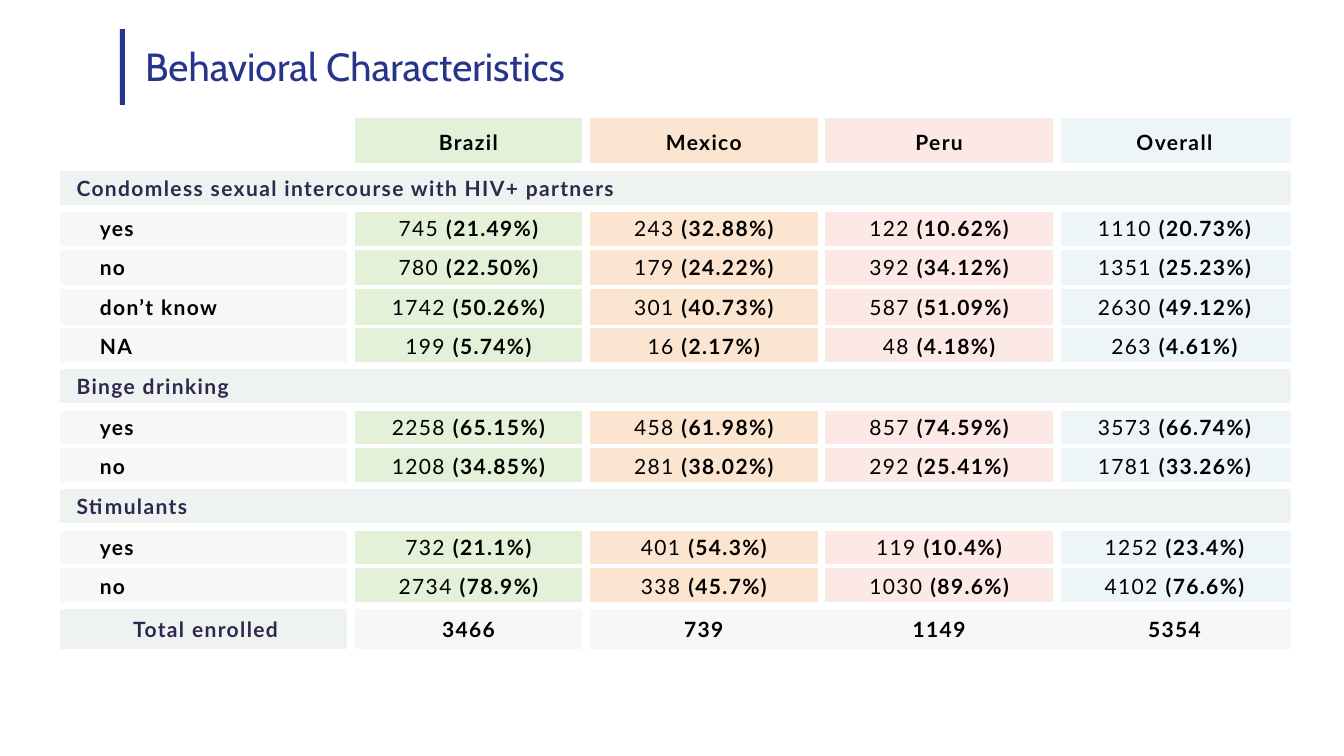
from dataclasses import dataclass

from lxml.etree import SubElement
from pptx import Presentation
from pptx.dml.color import RGBColor as RGB
from pptx.enum.shapes import MSO_SHAPE as Shape
from pptx.enum.text import MSO_ANCHOR as Anchor, PP_ALIGN as Align
from pptx.oxml.ns import qn
from pptx.util import Pt


@dataclass(frozen=True)
class Theme:
    title_font: str = "Cabin"
    table_font: str = "Lato"
    title_size: int = 28
    table_size: int = 15
    navy: str = "27348B"
    ink: str = "000000"
    heading: str = "2F284E"
    border: str = "FFFFFF"
    band: str = "EEF2F1"
    pale: str = "F6F8F7"
    groups: tuple = ("E2F1D7", "FCE5D0", "FCE8E4", "EEF5F8")


T = Theme()
WIDE, THIN, EDGE = 6, 3, 2.25
NO_STYLE = "{2D5ABB26-0587-4C30-8999-92F81FD0307C}"
LABEL_WIDTH, GROUP_WIDTH = 207.4, 168.1
ROW_HEIGHTS = {"header": 31.7, "section": 29.5, "answer": 28.1, "total": 33.8}
INDENTS = {"header": 7.2, "section": 11.5, "answer": 28.1, "total": 0}

ROWS = [
    ("header", "", "Brazil", "Mexico", "Peru", "Overall"),
    ("section", "Condomless sexual intercourse with HIV+ partners"),
    ("answer", "yes", "745 (21.49%)", "243 (32.88%)", "122 (10.62%)", "1110 (20.73%)"),
    ("answer", "no", "780 (22.50%)", "179 (24.22%)", "392 (34.12%)", "1351 (25.23%)"),
    ("answer", "don’t know", "1742 (50.26%)", "301 (40.73%)", "587 (51.09%)", "2630 (49.12%)"),
    ("answer", "NA", "199 (5.74%)", "16 (2.17%)", "48 (4.18%)", "263 (4.61%)"),
    ("section", "Binge drinking"),
    ("answer", "yes", "2258 (65.15%)", "458 (61.98%)", "857 (74.59%)", "3573 (66.74%)"),
    ("answer", "no", "1208 (34.85%)", "281 (38.02%)", "292 (25.41%)", "1781 (33.26%)"),
    ("section", "Stimulants"),
    ("answer", "yes", "732 (21.1%)", "401 (54.3%)", "119 (10.4%)", "1252 (23.4%)"),
    ("answer", "no", "2734 (78.9%)", "338 (45.7%)", "1030 (89.6%)", "4102 (76.6%)"),
    ("total", "Total enrolled", "3466", "739", "1149", "5354"),
]


def set_borders(cell, **widths):
    """Draw the given sides (L, R, T, B, in that order); 0 leaves a side out."""
    tc_pr = cell._tc.get_or_add_tcPr()
    for side, width in widths.items():
        if width:
            line = SubElement(tc_pr, qn(f"a:ln{side}"), w=str(Pt(width)))
            fill = SubElement(line, qn("a:solidFill"))
            SubElement(fill, qn("a:srgbClr"), val=T.border)


def write(cell, text, color, align):
    """Set bold, spaced text; a count before a percentage stays regular."""
    p = cell.text_frame.paragraphs[0]
    p.alignment = align
    count, bracket, share = text.partition("(")
    if bracket:
        p.text = count
        p.add_run().text = bracket + share
    else:
        p.text = text
    for i, r in enumerate(p.runs):
        r.font.name = T.table_font
        r.font.size = Pt(T.table_size)
        r.font.bold = not bracket or i == 1
        r.font.color.rgb = RGB.from_string(color)
        r._r.get_or_add_rPr().set("spc", "100")


prs = Presentation()
prs.slide_width, prs.slide_height = Pt(960), Pt(540)
s = prs.slides.add_slide(prs.slide_layouts[5])

bar = s.shapes.add_shape(Shape.RECTANGLE, Pt(85.7), Pt(20.9), Pt(3.6), Pt(54))
bar.shadow.inherit = False
bar.fill.solid()
bar.fill.fore_color.rgb = RGB.from_string(T.navy)
bar.line.fill.background()

title = s.shapes.title
title.left, title.top, title.width, title.height = Pt(96.5), Pt(20.9), Pt(411), Pt(51.8)
tf = title.text_frame
tf.text = "Behavioral Characteristics"
tf.vertical_anchor = Anchor.MIDDLE
p = tf.paragraphs[0]
p.alignment = Align.LEFT
font = p.runs[0].font
font.name, font.size = T.title_font, Pt(T.title_size)
font.color.rgb = RGB.from_string(T.navy)

table_height = sum(ROW_HEIGHTS[row[0]] for row in ROWS)
table = s.shapes.add_table(
    len(ROWS), 5, Pt(43.2), Pt(84.2), Pt(LABEL_WIDTH + 4 * GROUP_WIDTH), Pt(table_height)
).table
table.first_row = table.horz_banding = False
table._tbl.tblPr.find(qn("a:tableStyleId")).text = NO_STYLE
for col, column in enumerate(table.columns):
    column.width = Pt(GROUP_WIDTH if col else LABEL_WIDTH)

kinds = [row[0] for row in ROWS]
for row, (kind, *texts) in enumerate(ROWS):
    table.rows[row].height = Pt(ROW_HEIGHTS[kind])
    if kind == "section":
        table.cell(row, 0).merge(table.cell(row, 4))
    above = THIN if kinds[max(row - 1, 0):row + 1] == ["answer"] * 2 else WIDE
    below = THIN if kinds[row:row + 2] == ["answer"] * 2 else WIDE

    for col, text in enumerate(texts):
        cell = table.cell(row, col)
        is_label = col == 0
        is_last = col == 4 or kind == "section"
        joined = kind == "total" and col > 0
        set_borders(
            cell,
            L=0 if is_label or (joined and col > 1) else WIDE,
            R=EDGE if is_last else 0 if joined else WIDE,
            T=0 if kind == "header" else above,
            B=below,
        )

        if kind == "header" and is_label:
            cell.fill.background()
            continue
        if is_label:
            fill = T.pale if kind == "answer" else T.band
        else:
            fill = T.pale if kind == "total" else T.groups[col - 1]
        cell.fill.solid()
        cell.fill.fore_color.rgb = RGB.from_string(fill)

        cell.vertical_anchor = Anchor.MIDDLE
        cell.margin_left = Pt(INDENTS[kind] if is_label or kind == "header" else 0.7)
        cell.margin_right = Pt(7.2 if kind == "header" else 0.7 if INDENTS[kind] or col else 0)
        cell.margin_top = Pt(8.6 if kind == "header" else 0.7 if INDENTS[kind] or col else 0)
        cell.margin_bottom = Pt(8.6 if kind == "header" else 0)
        color = T.heading if is_label and kind != "answer" else T.ink
        align = Align.LEFT if is_label and kind != "total" else Align.CENTER
        write(cell, text, color, align)

prs.save("out.pptx")
